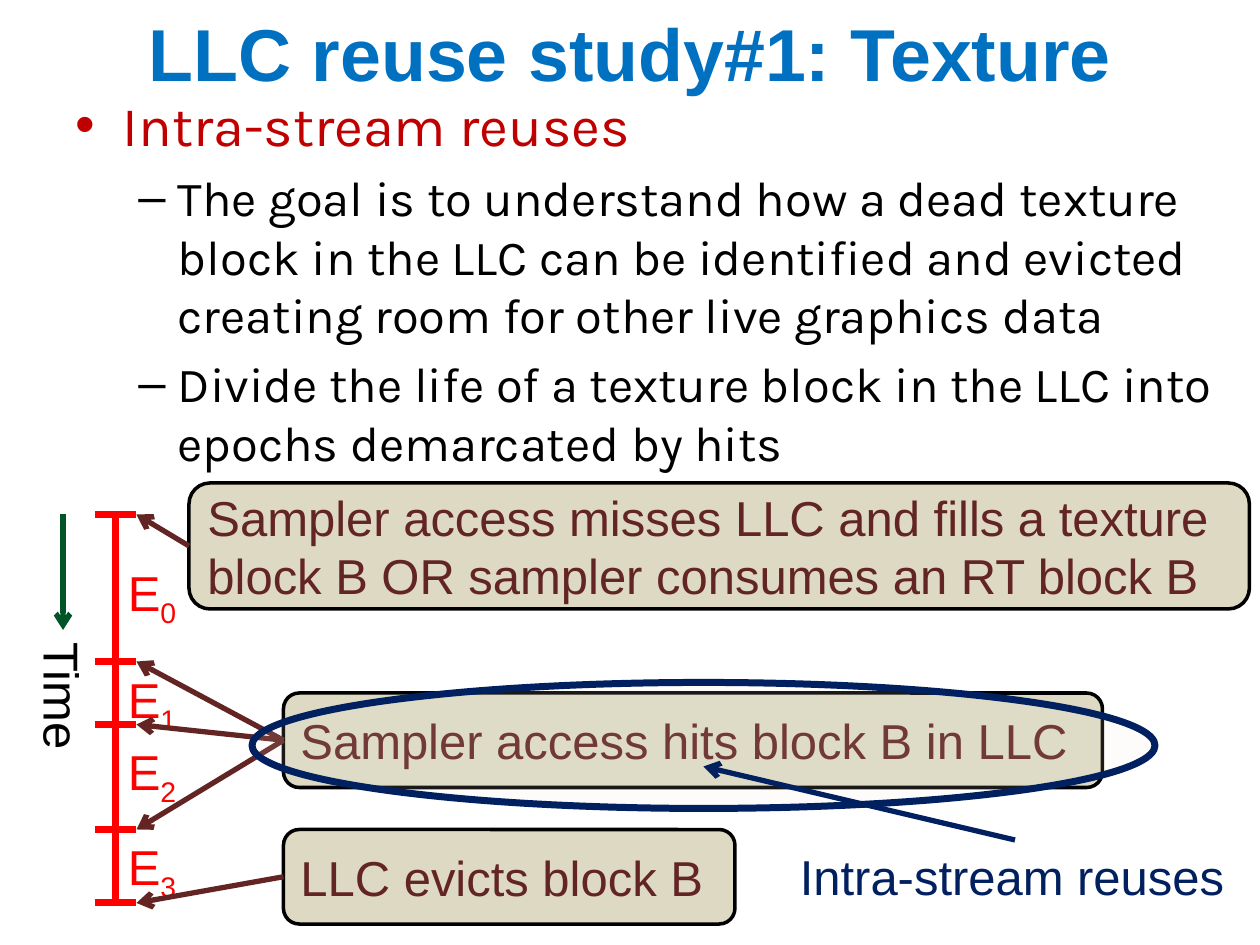
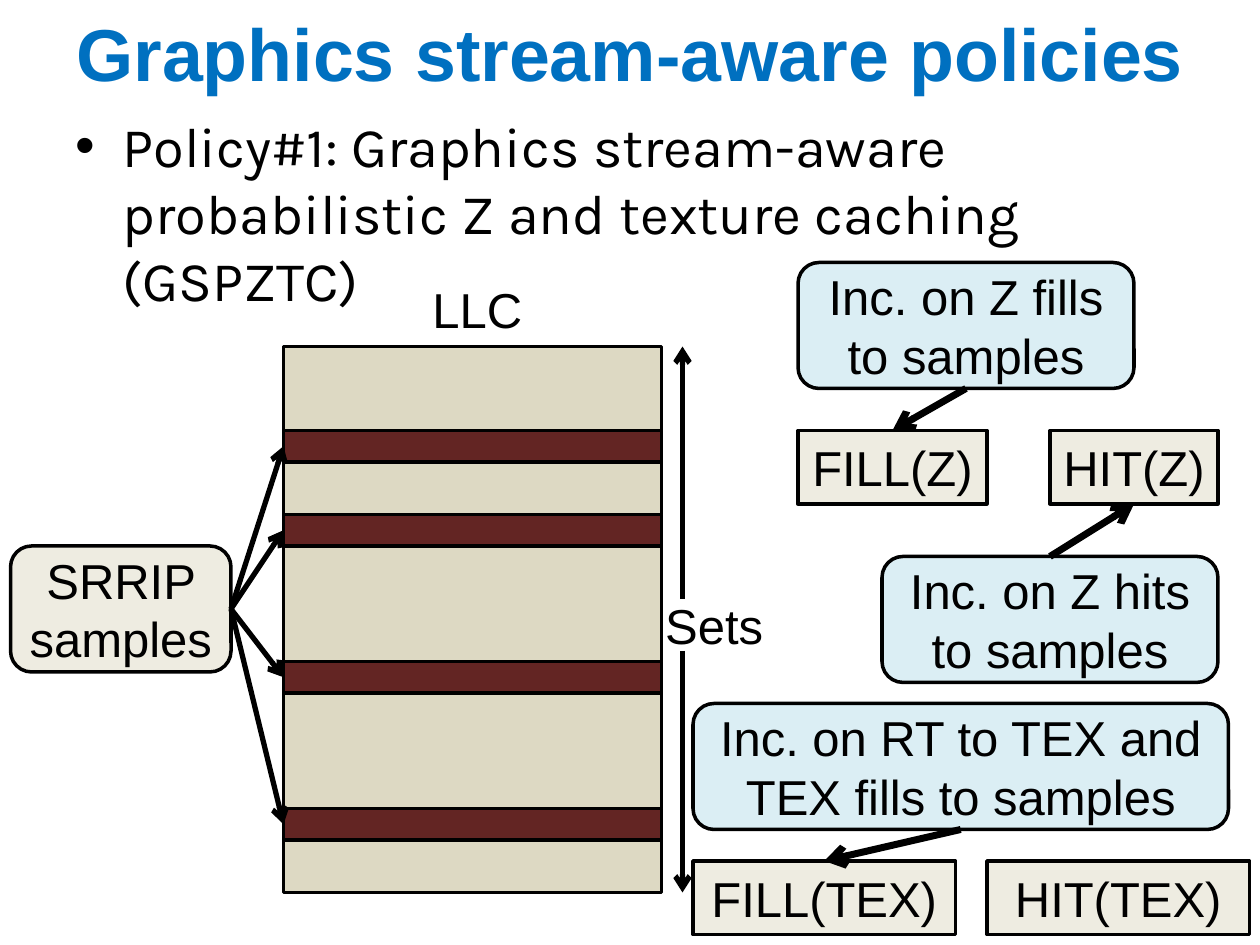
"""Build two slides on texture reuse and stream-aware policies in a last-level cache."""
from dataclasses import dataclass
from itertools import accumulate

import pptx
import pptx.dml.color
import pptx.enum.shapes
import pptx.enum.text
import pptx.oxml.ns
import pptx.util
from lxml import etree

Pt = pptx.util.Pt
KIND = pptx.enum.shapes.MSO_SHAPE
ALIGN = pptx.enum.text.PP_ALIGN
ANCHOR = pptx.enum.text.MSO_ANCHOR


@dataclass(frozen=True)
class Theme:
    title: str = "0070C0"
    heading: str = "C00000"
    ink: str = "000000"
    timeline: str = "FF0000"
    time_arrow: str = "005426"
    maroon: str = "632523"
    navy: str = "002060"
    tan: str = "DDD9C3"
    cream: str = "EEECE1"
    ice: str = "DBEEF4"
    font: str = "Arial"
    body_font: str = "Karla"
    title_size: int = 42
    body_size: int = 32
    text_size: int = 28
    outline: int = 2
    arrow: int = 3
    heavy: int = 4


THEME = Theme()
LABEL_HEIGHT = 41

REUSE_TITLE = "LLC reuse study#1: Texture"
REUSE_POINTS = [
    (0, "Intra-stream reuses", THEME.heading),
    (1, "The goal is to understand how a dead texture block in the LLC can be "
        "identified and evicted creating room for other live graphics data", THEME.ink),
    (1, "Divide the life of a texture block in the LLC into epochs demarcated by hits",
     THEME.ink),
]
AXIS_X, TICK_REACH = 66, 12
EVENT_TIMES = [294, 378, 414, 474, 516]
EPOCH_TOPS = [318, 379, 420, 474.5]
EVENTS = [
    ("Sampler access misses LLC and fills a texture block B OR sampler consumes "
     "an RT block B", (108, 276, 606, 72), EVENT_TIMES[:1]),
    ("Sampler access hits block B in LLC", (162, 396, 468, 54), EVENT_TIMES[1:4]),
    ("LLC evicts block B", (162, 474, 258, 54), EVENT_TIMES[4:]),
]

POLICY_TITLE = "Graphics stream-aware policies"
POLICY_POINTS = [
    (0, "Policy#1: Graphics stream-aware probabilistic Z and texture caching (GSPZTC)",
     THEME.ink),
]
CACHE_LEFT, CACHE_TOP, CACHE_WIDTH = 162, 198, 216
SET_HEIGHTS = [48, 18, 30, 18, 66, 18, 66, 18, 30]
SETS_X = 390
COUNTERS = {
    "FILL(Z)": (456, 246, 108, 42),
    "HIT(Z)": (600, 246, 96, 42),
    "FILL(TEX)": (396, 492, 150, 42),
    "HIT(TEX)": (564, 492, 150, 42),
}
RULES = [
    ("Inc. on Z fills to samples", (456, 150, 192, 72), 2, "FILL(Z)", 0),
    ("Inc. on Z hits to samples", (504, 318, 192, 72), 0, "HIT(Z)", 2),
    ("Inc. on RT to TEX and TEX fills to samples", (396, 402, 306, 72), 2, "FILL(TEX)", 0),
]


def rgb(color):
    return pptx.dml.color.RGBColor.from_string(color)


def add_xml(parent, tag, **attributes):
    return etree.SubElement(parent, pptx.oxml.ns.qn(tag), attributes)


def style(paragraph, color, size=THEME.text_size, font=THEME.font, bold=False,
          align=ALIGN.LEFT):
    paragraph.alignment = align
    paragraph.font.name = font
    paragraph.font.size = Pt(size)
    paragraph.font.bold = bold
    paragraph.font.color.rgb = rgb(color)


def add_frame(slide, place, wrap=True):
    frame = slide.shapes.add_textbox(*map(Pt, place))
    frame.text_frame.word_wrap = wrap
    return frame


def add_label(slide, text, place, color=THEME.ink, subscript=""):
    label = add_frame(slide, (*place, LABEL_HEIGHT), wrap=False)
    label.text_frame.auto_size = pptx.enum.text.MSO_AUTO_SIZE.SHAPE_TO_FIT_TEXT
    paragraph = label.text_frame.paragraphs[0]
    paragraph.add_run().text = text
    if subscript:
        index = paragraph.add_run()
        index.text = subscript
        index._r.get_or_add_rPr().set("baseline", "-25000")
    style(paragraph, color)
    return label


def add_box(slide, kind, place, fill, text="", color=THEME.ink, align=ALIGN.CENTER,
            line=THEME.ink, width=THEME.outline):
    box = slide.shapes.add_shape(kind, *map(Pt, place))
    box.shadow.inherit = False
    box.fill.solid()
    box.fill.fore_color.rgb = rgb(fill)
    box.line.color.rgb = rgb(line)
    box.line.width = Pt(width)
    if text:
        box.text_frame.word_wrap = True
        box.text_frame.vertical_anchor = ANCHOR.MIDDLE
        box.text_frame.text = text
        style(box.text_frame.paragraphs[0], color, align=align)
    return box


def add_line(slide, color, width, start=(0, 0), end=(0, 0), begin_at=None, end_at=None,
             arrow=True):
    line = slide.shapes.add_connector(
        pptx.enum.shapes.MSO_CONNECTOR.STRAIGHT, *map(Pt, (*start, *end)))
    line.line.color.rgb = rgb(color)
    line.line.width = Pt(width)
    if begin_at:
        line.begin_connect(*begin_at)
    if end_at:
        line.end_connect(*end_at)
    properties = line._element.spPr
    if arrow:
        add_xml(properties.find(pptx.oxml.ns.qn("a:ln")), "a:tailEnd", type="arrow")
    add_xml(properties, "a:effectLst")


def add_slide(deck, title, points, body_top):
    slide = deck.slides.add_slide(deck.slide_layouts[6])
    heading = add_frame(slide, (0, 0, 720, 60)).text_frame
    heading.vertical_anchor = ANCHOR.MIDDLE
    heading.text = title
    style(heading.paragraphs[0], THEME.title, THEME.title_size, bold=True,
          align=ALIGN.CENTER)

    body = add_frame(slide, (36, body_top, 684, 540 - body_top)).text_frame
    for number, (level, text, color) in enumerate(points):
        paragraph = body.add_paragraph() if number else body.paragraphs[0]
        paragraph.text = text
        paragraph.level = level
        size = (THEME.body_size, THEME.text_size)[level]
        paragraph.space_before = Pt(size * 0.2)
        properties = paragraph._p.get_or_add_pPr()
        margin, hang = ((27, 27), (58.5, 22.5))[level]
        properties.set("marL", str(Pt(margin)))
        properties.set("indent", str(-Pt(hang)))
        add_xml(properties, "a:buFont", typeface=THEME.font)
        add_xml(properties, "a:buChar", char="•–"[level])
        style(paragraph, color, size, THEME.body_font)
    return slide


def build_reuse(deck):
    slide = add_slide(deck, REUSE_TITLE, REUSE_POINTS, 48)
    tick_end = AXIS_X + TICK_REACH
    add_line(slide, THEME.timeline, THEME.heavy, (AXIS_X, EVENT_TIMES[0]),
             (AXIS_X, EVENT_TIMES[-1]), arrow=False)
    for time in EVENT_TIMES:
        add_line(slide, THEME.timeline, THEME.heavy, (AXIS_X - TICK_REACH, time),
                 (tick_end, time), arrow=False)
    add_line(slide, THEME.time_arrow, THEME.arrow, (36, 294), (36, 360))
    add_label(slide, "Time", (-2, 377.5, 76)).rotation = 90
    for epoch, top in enumerate(EPOCH_TOPS):
        add_label(slide, "E", (AXIS_X, top, 44), THEME.timeline, str(epoch))

    for text, place, times in EVENTS:
        event = add_box(slide, KIND.ROUNDED_RECTANGLE, place, THEME.tan, text,
                        THEME.maroon, ALIGN.LEFT)
        for time in times:
            add_line(slide, THEME.maroon, THEME.arrow, end=(tick_end, time),
                     begin_at=(event, 1))

    highlight = add_box(slide, KIND.OVAL, (144, 390, 516, 72), THEME.cream,
                        line=THEME.navy, width=THEME.heavy)
    tint = highlight._element.spPr.find(".//" + pptx.oxml.ns.qn("a:srgbClr"))
    add_xml(tint, "a:alpha", val="11000")
    reuses = add_label(slide, "Intra-stream reuses", (450, 480, 260), THEME.navy)
    add_line(slide, THEME.navy, THEME.arrow, end=(402, 438), begin_at=(reuses, 0))


def build_policy(deck):
    slide = add_slide(deck, POLICY_TITLE, POLICY_POINTS, 60)
    edges = list(accumulate(SET_HEIGHTS, initial=CACHE_TOP))
    cache_sets = [
        add_box(slide, KIND.RECTANGLE, (CACHE_LEFT, top, CACHE_WIDTH, height),
                (THEME.tan, THEME.maroon)[number % 2])
        for number, (top, height) in enumerate(zip(edges, SET_HEIGHTS))
    ]
    samples = add_box(slide, KIND.ROUNDED_RECTANGLE, (6, 312, 126, 72), THEME.cream,
                      "SRRIP samples")
    for sampled_set in cache_sets[1::2]:
        add_line(slide, THEME.ink, THEME.arrow, begin_at=(samples, 3),
                 end_at=(sampled_set, 1))

    counters = {name: add_box(slide, KIND.RECTANGLE, place, THEME.cream, name)
                for name, place in COUNTERS.items()}
    for text, place, side, counter, counter_side in RULES:
        rule = add_box(slide, KIND.ROUNDED_RECTANGLE, place, THEME.ice, text)
        add_line(slide, THEME.ink, THEME.heavy, begin_at=(rule, side),
                 end_at=(counters[counter], counter_side))

    add_label(slide, "LLC", (240, 156, 66))
    add_label(slide, "Sets", (373, 337, 71))
    for start, end in ((342, edges[0]), (372, edges[-1])):
        add_line(slide, THEME.ink, THEME.arrow, (SETS_X, start), (SETS_X, end))


def main():
    deck = pptx.Presentation()
    deck.slide_width, deck.slide_height = Pt(720), Pt(540)
    build_reuse(deck)
    build_policy(deck)
    deck.save("out.pptx")


if __name__ == "__main__":
    main()
